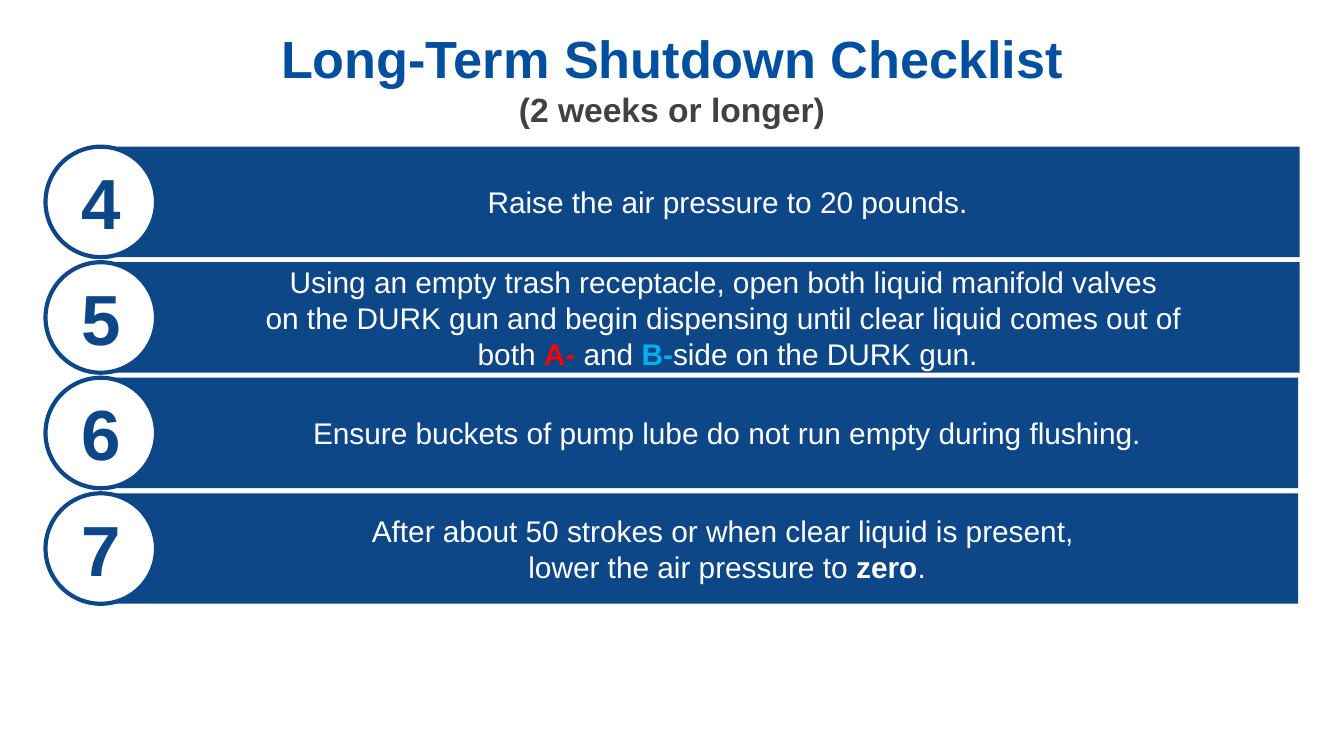
from dataclasses import dataclass

from lxml import etree
from pptx import Presentation
from pptx.dml.color import RGBColor
from pptx.enum.shapes import MSO_SHAPE
from pptx.enum.text import MSO_ANCHOR, MSO_AUTO_SIZE, PP_ALIGN
from pptx.oxml.ns import qn
from pptx.shapes.base import BaseShape
from pptx.slide import Slide
from pptx.text.text import TextFrame
from pptx.util import Pt

RECTANGLE = MSO_SHAPE.RECTANGLE
OVAL = MSO_SHAPE.OVAL
MIDDLE = MSO_ANCHOR.MIDDLE
FIT_SHAPE = MSO_AUTO_SIZE.SHAPE_TO_FIT_TEXT
CENTER = PP_ALIGN.CENTER

NAVY = RGBColor(0x0D, 0x47, 0x87)
TITLE_BLUE = RGBColor(0x00, 0x50, 0x9F)
GRAY = RGBColor(0x40, 0x41, 0x40)
WHITE = RGBColor(0xFF, 0xFF, 0xFF)
RED = RGBColor(0xFF, 0x00, 0x00)
SKY = RGBColor(0x00, 0xB0, 0xF0)

FONT = "Arial"
SLIDE_WIDTH, SLIDE_HEIGHT = 720, 405
FIRST_TOP, PITCH, ROW_HEIGHT = 78.6, 61.9, 59.2
BAR_LEFT, BADGE_LEFT = 51.1, 24.4
NUMBER_HEIGHT = 53.3


@dataclass(frozen=True)
class Span:
    text: str
    color: RGBColor = WHITE
    bold: bool = False
    size: float = 16


@dataclass(frozen=True)
class Step:
    number: int
    spans: tuple[Span, ...]
    bar_width: float


STEPS = (
    Step(4, (Span("Raise the air pressure to 20 pounds."),), 645.1),
    Step(5, (
        Span("Using an empty trash receptacle, open both liquid manifold valves \n"
             "on the DURK gun and begin dispensing until clear liquid comes out of \n"
             "both "),
        Span("A-", RED, True),
        Span(" and "),
        Span("B-", SKY, True),
        Span("side on the DURK gun."),
    ), 645.1),
    Step(6, (Span("Ensure buckets of pump lube do not run empty during flushing."),), 644.4),
    Step(7, (
        Span("After about 50 strokes or when clear liquid is present, \n"
             "lower the air pressure to "),
        Span("zero", bold=True),
        Span("."),
    ), 644.4),
)
TITLE = (
    Span("Long-Term Shutdown Checklist\n", TITLE_BLUE, True, 28),
    Span("(2 weeks or longer)", GRAY, True, 18),
)


def write_spans(text_frame: TextFrame, spans: tuple[Span, ...]) -> None:
    """Write the spans as one centred paragraph; a newline is a line break."""
    text_frame.word_wrap = True
    paragraph = text_frame.paragraphs[0]
    paragraph.alignment = CENTER
    for span in spans:
        for index, line in enumerate(span.text.split("\n")):
            if index:
                paragraph.add_line_break()
                line_break = paragraph._p.findall(qn("a:br"))[-1]
                etree.SubElement(line_break, qn("a:rPr"), sz=str(int(span.size * 100)))
            if line:
                run = paragraph.add_run()
                run.text = line
                run.font.name = FONT
                run.font.size = Pt(span.size)
                run.font.bold = span.bold
                run.font.color.rgb = span.color


def paint(shape: BaseShape, fill: RGBColor) -> None:
    shape.shadow.inherit = False
    shape.fill.solid()
    shape.fill.fore_color.rgb = fill
    shape.line.fill.background()


def draw_step(slide: Slide, step: Step, top: float) -> None:
    shapes = slide.shapes.add_group_shape().shapes

    bar = shapes.add_shape(RECTANGLE, Pt(BAR_LEFT), Pt(top), Pt(step.bar_width), Pt(ROW_HEIGHT))
    paint(bar, NAVY)
    text_frame = bar.text_frame
    text_frame.vertical_anchor = MIDDLE
    text_frame.margin_left, text_frame.margin_right = Pt(50.4), Pt(18)
    text_frame.margin_top = text_frame.margin_bottom = Pt(3.6)
    write_spans(text_frame, step.spans)

    badge = shapes.add_shape(OVAL, Pt(BADGE_LEFT), Pt(top), Pt(ROW_HEIGHT), Pt(ROW_HEIGHT))
    paint(badge, WHITE)
    badge.line.color.rgb = NAVY
    badge.line.width = Pt(2.25)

    number_top = top + (ROW_HEIGHT - NUMBER_HEIGHT) / 2
    number = shapes.add_textbox(Pt(BADGE_LEFT + 0.5), Pt(number_top), Pt(58.3), Pt(NUMBER_HEIGHT))
    write_spans(number.text_frame, (Span(str(step.number), NAVY, True, 38),))
    number.text_frame.auto_size = FIT_SHAPE


def main() -> None:
    presentation = Presentation()
    presentation.slide_width = Pt(SLIDE_WIDTH)
    presentation.slide_height = Pt(SLIDE_HEIGHT)
    slide = presentation.slides.add_slide(presentation.slide_layouts[6])

    for index, step in enumerate(STEPS):
        draw_step(slide, step, FIRST_TOP + index * PITCH)

    title = slide.shapes.add_textbox(Pt(0), Pt(7.9), Pt(SLIDE_WIDTH), Pt(67.7))
    title.text_frame.vertical_anchor = MIDDLE
    write_spans(title.text_frame, TITLE)

    presentation.save("out.pptx")


if __name__ == "__main__":
    main()
